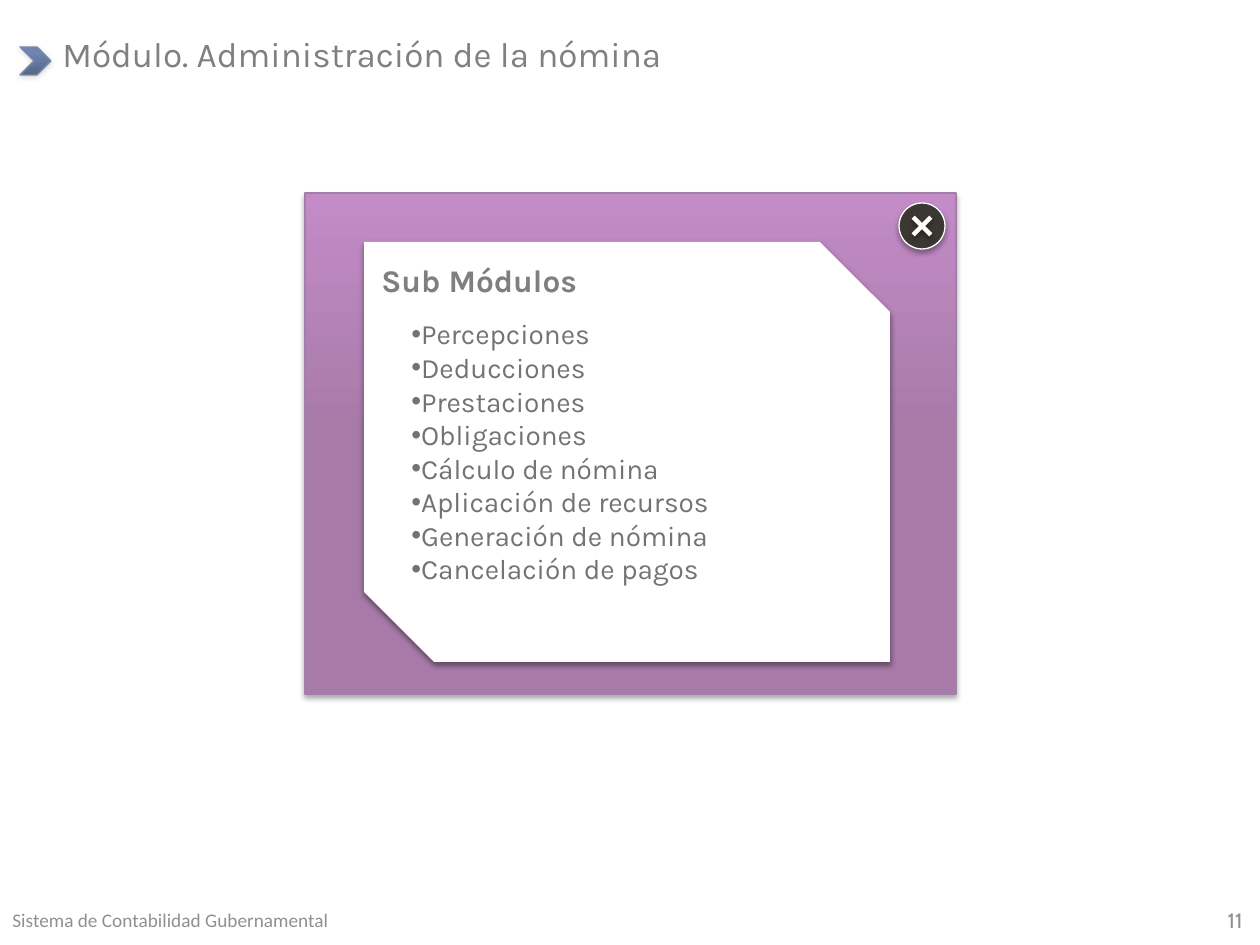
from lxml.etree import SubElement
from pptx import Presentation
from pptx.dml.color import RGBColor as RGB
from pptx.enum.shapes import MSO_SHAPE as SHAPE
from pptx.enum.text import MSO_ANCHOR as ANCHOR, PP_ALIGN as ALIGN
from pptx.oxml import parse_xml
from pptx.oxml.ns import nsdecls, qn
from pptx.util import Emu, Pt

PX = 914400 / 126
COLORS = {
    "chevron_dark": "556787", "chevron_mid": "6F85AF", "chevron_light": "6E86B1",
    "chevron_line": "7689AA", "panel_dark": "A77AA8", "panel_light": "C38CC8",
    "panel_line": "A07FA8", "white": "FFFFFF", "button": "3B3732",
    "title": "808080", "heading": "7F7F7F", "body": "737373", "footer": "91908F",
}


def add_shape(kind, box, fill, line=None, shadow=(35, 1.8)):
    """Preset shape with a plain or upward gradient fill and a soft shadow below."""
    shape = slide.shapes.add_shape(kind, *[Emu(round(v * PX)) for v in box])
    if isinstance(fill, str):
        shape.fill.solid()
        shape.fill.fore_color.rgb = RGB.from_string(COLORS[fill])
    else:
        shape.fill.gradient()
        shape.fill.gradient_angle = 90
        stops = shape._element.spPr.find(qn("a:gradFill")).find(qn("a:gsLst"))
        for stop in list(stops):
            stops.remove(stop)
        for position, color in fill:
            stop = SubElement(stops, qn("a:gs"), pos=str(position * 1000))
            SubElement(stop, qn("a:srgbClr"), val=COLORS[color])
    if line:
        shape.line.color.rgb = RGB.from_string(COLORS[line])
        shape.line.width = Pt(0.75)
    else:
        shape.line.fill.background()
    shape.shadow.inherit = False
    opacity, distance = shadow
    shape._element.spPr.find(qn("a:effectLst")).append(parse_xml(
        f'<a:outerShdw {nsdecls("a")} blurRad="{Pt(3.1)}" dist="{Pt(distance)}" '
        f'dir="5400000" rotWithShape="0"><a:srgbClr val="000000">'
        f'<a:alpha val="{opacity * 1000}"/></a:srgbClr></a:outerShdw>'))
    return shape


def style_font(font, color, **values):
    for name, value in values.items():
        setattr(font, name, value)
    font.color.rgb = RGB.from_string(COLORS[color])


deck = Presentation()
deck.slide_width, deck.slide_height = Emu(round(1260 * PX)), Emu(round(945 * PX))
slide = deck.slides.add_slide(deck.slide_layouts[6])

# Title marker and purple panel
add_shape(SHAPE.CHEVRON, (20, 47, 31, 28),
          [(0, "chevron_dark"), (80, "chevron_mid"), (100, "chevron_light")],
          "chevron_line", (15, 0.8))
add_shape(SHAPE.RECTANGLE, (305, 193, 651, 501),
          [(52, "panel_dark"), (100, "panel_light")], "panel_line")

# White card with the list of submodules
card = add_shape(SHAPE.SNIP_2_DIAG_RECTANGLE, (364, 242, 526, 420), "white",
                 shadow=(38, 1.6))
submodules = ["Percepciones", "Deducciones", "Prestaciones", "Obligaciones",
              "Cálculo de nómina", "Aplicación de recursos",
              "Generación de nómina", "Cancelación de pagos"]
card_text = card.text_frame
card_text.text = "\n".join(submodules)
card_text.word_wrap = True
card_text.vertical_anchor = ANCHOR.TOP
card_text.margin_top = Emu(round(40 * PX))
for item in card_text.paragraphs:
    item.alignment = ALIGN.LEFT
    bullet_props = item._p.get_or_add_pPr()
    SubElement(bullet_props, qn("a:buFont"), typeface="Arial")
    SubElement(bullet_props, qn("a:buChar"), char="•")
    style_font(item.runs[0].font, "body", name="Karla", size=Pt(16))

# Title, card heading, footer and page number
labels = [
    ("Módulo. Administración de la nómina", (50, 26, 1184, 79), ANCHOR.TOP, ALIGN.LEFT,
     "title", dict(name="Karla", size=Pt(20))),
    ("Sub Módulos", (369, 267, 486, 25), ANCHOR.MIDDLE, ALIGN.LEFT,
     "heading", dict(name="Karla", size=Pt(18), bold=True)),
    ("Sistema de Contabilidad Gubernamental", (0, 895, 714, 50), ANCHOR.MIDDLE, ALIGN.LEFT,
     "footer", dict(name="Calibri", size=Pt(11))),
    ("11", (1164, 896, 91, 49), ANCHOR.MIDDLE, ALIGN.RIGHT,
     "footer", dict(name="Cabin", size=Pt(12))),
]
for words, box, anchor, align, color, font_values in labels:
    label = slide.shapes.add_textbox(*[Emu(round(v * PX)) for v in box]).text_frame
    label.word_wrap = True
    label.vertical_anchor = anchor
    label.text = words
    label.paragraphs[0].alignment = align
    style_font(label.paragraphs[0].runs[0].font, color, **font_values)

# Close button
add_shape(SHAPE.OVAL, (899, 203, 46, 46), "button", "white")
cross = add_shape(SHAPE.MATH_PLUS, (905, 209, 34, 34), "white")
cross.adjustments[0] = 0.13
cross.rotation = 315

deck.save("out.pptx")
